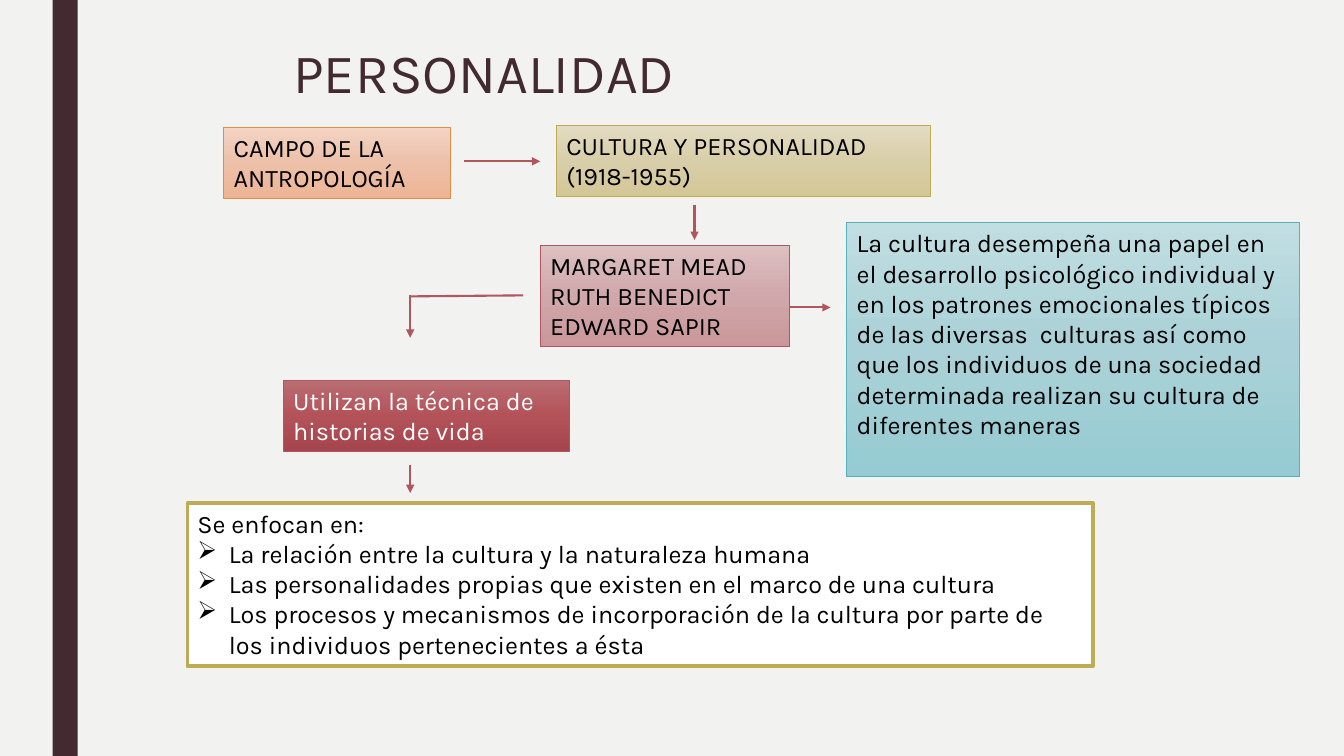
from copy import deepcopy

from lxml.etree import SubElement
from pptx import Presentation
from pptx.dml.color import RGBColor
from pptx.enum.shapes import MSO_CONNECTOR, MSO_SHAPE
from pptx.enum.text import MSO_ANCHOR, MSO_AUTO_SIZE, PP_ALIGN
from pptx.oxml.ns import qn
from pptx.util import Pt

PAPER = RGBColor(0xF2, 0xF2, 0xF0)
PLUM = RGBColor(0x43, 0x2A, 0x30)
BLACK = RGBColor(0x00, 0x00, 0x00)
WHITE = RGBColor(0xFF, 0xFF, 0xFF)
ORANGE = RGBColor(0xE0, 0x8C, 0x4A)
OLIVE = RGBColor(0xBD, 0xAB, 0x56)
ROSE = RGBColor(0xB0, 0x56, 0x5D)
TEAL = RGBColor(0x55, 0xB1, 0xBC)

# Gradients run from top to bottom in three stops.
ORANGE_FADE = (RGBColor(0xF3, 0xD4, 0xC5), RGBColor(0xED, 0xC0, 0xA9), RGBColor(0xED, 0xB4, 0x94))
OLIVE_FADE = (RGBColor(0xE3, 0xDC, 0xC1), RGBColor(0xD8, 0xCE, 0xA9), RGBColor(0xD4, 0xC7, 0x96))
ROSE_FADE = (RGBColor(0xDD, 0xC0, 0xC1), RGBColor(0xD0, 0xA8, 0xAB), RGBColor(0xCA, 0x96, 0x99))
TEAL_FADE = (RGBColor(0xC1, 0xDE, 0xE2), RGBColor(0xA9, 0xD1, 0xD7), RGBColor(0x96, 0xCB, 0xD3))
RED_FADE = (RGBColor(0xB9, 0x6E, 0x73), RGBColor(0xB4, 0x52, 0x59), RGBColor(0xA4, 0x44, 0x4C))


def apply_format(target, values):
    for name, value in values.items():
        setattr(target, name, value)


class ConceptMap:
    font_name = "Karla"
    body_size = 18
    bullet_indent = 22.5
    frame_format = {
        "word_wrap": True,
        "auto_size": MSO_AUTO_SIZE.NONE,
        "vertical_anchor": MSO_ANCHOR.TOP,
        "margin_left": Pt(7.2),
        "margin_right": Pt(7.2),
        "margin_top": Pt(3.6),
        "margin_bottom": Pt(3.6),
    }

    def __init__(self, slide):
        self.slide = slide
        slide.background.fill.solid()
        slide.background.fill.fore_color.rgb = PAPER

    def add_text(self, paragraph, text, size, color):
        paragraph.alignment = PP_ALIGN.LEFT
        run = paragraph.add_run()
        run.text = text
        apply_format(run.font, {"name": self.font_name, "size": Pt(size), "bold": False})
        run.font.color.rgb = color

    def title(self, text, left, top, width, height):
        heading = self.slide.shapes.title
        apply_format(heading, {"left": Pt(left), "top": Pt(top),
                               "width": Pt(width), "height": Pt(height)})
        apply_format(heading.text_frame, self.frame_format)
        paragraph = heading.text_frame.paragraphs[0]
        paragraph.line_spacing = 0.89
        self.add_text(paragraph, text, 39.6, PLUM)

    def rectangle(self, left, top, width, height):
        shape = self.slide.shapes.add_shape(
            MSO_SHAPE.RECTANGLE, Pt(left), Pt(top), Pt(width), Pt(height))
        shape.shadow.inherit = False
        return shape

    def side_bar(self, left, width, height):
        bar = self.rectangle(left, 0, width, height)
        bar.fill.solid()
        bar.fill.fore_color.rgb = PLUM
        bar.line.fill.background()

    def fade(self, shape, colors):
        """Fill the shape with evenly spaced colours, top to bottom."""
        shape.fill.gradient()
        shape.fill.gradient_angle = 270
        stop_list = shape._element.spPr.find(qn("a:gradFill")).find(qn("a:gsLst"))
        stop_list.insert(1, deepcopy(stop_list[0]))
        for index, (stop, color) in enumerate(zip(shape.fill.gradient_stops, colors)):
            stop.position = index / (len(colors) - 1)
            stop.color.rgb = color

    def bullet(self, paragraph):
        properties = paragraph._p.get_or_add_pPr()
        indent = Pt(self.bullet_indent)
        properties.set("marL", str(indent))
        properties.set("indent", str(-indent))
        SubElement(properties, qn("a:buChar")).set("char", "➢")

    def box(self, place, lines, border, colors=None, ink=BLACK, border_width=0.5, bullets=()):
        shape = self.rectangle(*place)
        if colors:
            self.fade(shape, colors)
        else:
            shape.fill.solid()
            shape.fill.fore_color.rgb = WHITE
        shape.line.color.rgb = border
        shape.line.width = Pt(border_width)
        frame = shape.text_frame
        apply_format(frame, self.frame_format)
        for index, text in enumerate((*lines, *bullets)):
            paragraph = frame.add_paragraph() if index else frame.paragraphs[0]
            self.add_text(paragraph, text, self.body_size, ink)
            if index >= len(lines):
                self.bullet(paragraph)

    def link(self, start, end, arrow=True):
        connector = self.slide.shapes.add_connector(
            MSO_CONNECTOR.STRAIGHT, *(Pt(value) for value in (*start, *end)))
        connector.line.color.rgb = ROSE
        connector.line.width = Pt(1.5)
        properties = connector._element.spPr
        if arrow:
            SubElement(properties.find(qn("a:ln")), qn("a:tailEnd")).set("type", "triangle")
        SubElement(properties, qn("a:effectLst"))


def main():
    deck = Presentation()
    deck.slide_width, deck.slide_height = Pt(960), Pt(540)
    concept_map = ConceptMap(deck.slides.add_slide(deck.slide_layouts[5]))

    concept_map.side_bar(37.5, 18, 540)
    concept_map.title("PERSONALIDAD", 202.3, 29.5, 702, 41.8)

    concept_map.box((159.8, 90.7, 162, 51.1), ["CAMPO DE LA ANTROPOLOGÍA"], ORANGE, ORANGE_FADE)
    concept_map.box((397.4, 89.3, 267.1, 51.1), ["CULTURA Y PERSONALIDAD (1918-1955)"],
                    OLIVE, OLIVE_FADE)
    concept_map.box((385.9, 175, 177.8, 72.7),
                    ["MARGARET MEAD", "RUTH BENEDICT", "EDWARD SAPIR"], ROSE, ROSE_FADE)
    concept_map.box((604.8, 159.1, 323.3, 181.4),
                    ["La cultura desempeña una papel en el desarrollo psicológico individual y "
                     "en los patrones emocionales típicos de las diversas  culturas así como "
                     "que los individuos de una sociedad determinada realizan su cultura de "
                     "diferentes maneras"], TEAL, TEAL_FADE)
    concept_map.box((202.3, 271.4, 204.5, 51.1), ["Utilizan la técnica de historias de vida"],
                    ROSE, RED_FADE, ink=WHITE)
    concept_map.box((133.9, 359.3, 646.6, 116.6), ["Se enfocan en:"], OLIVE, border_width=2.75,
                    bullets=["La relación entre la cultura y la naturaleza humana",
                             "Las personalidades propias que existen en el marco de una cultura",
                             "Los procesos y mecanismos de incorporación de la cultura por parte "
                             "de los individuos pertenecientes a ésta"])

    technique_x = 293
    concept_map.link((331.2, 115.2), (385.9, 115.2))
    concept_map.link((496.1, 146.2), (496.1, 171.4))
    concept_map.link((563.8, 219.6), (593.3, 219.6))
    concept_map.link((technique_x, 211), (technique_x, 241.2))
    concept_map.link((373.7, 211), (technique_x, 211.7), arrow=False)
    concept_map.link((technique_x, 331.9), (technique_x, 352.1))

    deck.save("out.pptx")


if __name__ == "__main__":
    main()
